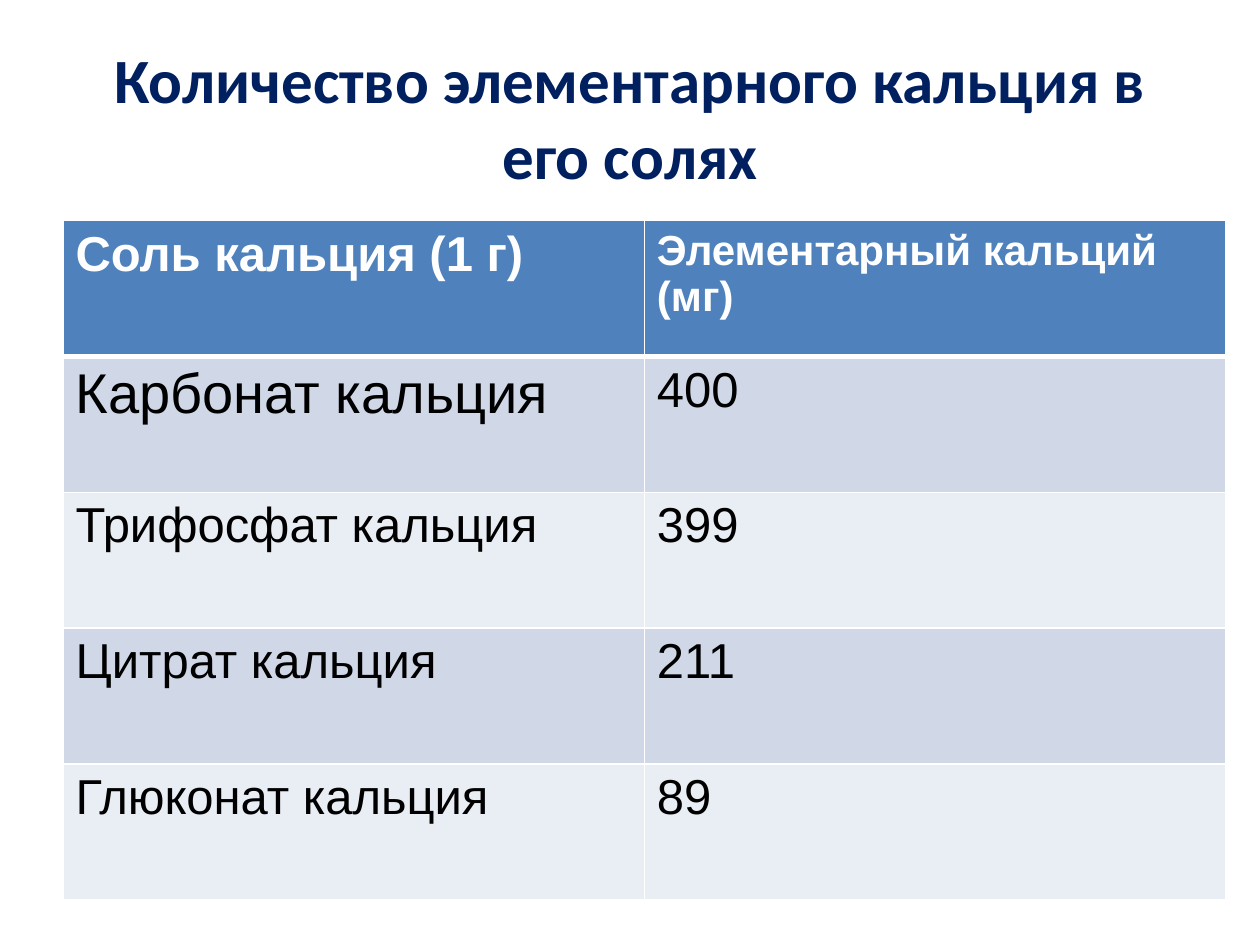
"""Build a slide with a table of elemental calcium in calcium salts."""
from lxml.etree import SubElement
from pptx import Presentation
from pptx.dml.color import RGBColor as Color
from pptx.enum.text import MSO_ANCHOR as Anchor, PP_ALIGN as Align
from pptx.oxml.ns import qn
from pptx.util import Cm, Pt

TITLE = "Количество элементарного кальция в его солях"
ROWS = [
    (("Соль кальция (1 г)", 28), ("Элементарный кальций (мг)", 24)),
    (("Карбонат кальция", 32), ("400", 28)),
    (("Трифосфат кальция", 28), ("399", 28)),
    (("Цитрат кальция", 28), ("211", 28)),
    (("Глюконат кальция", 28), ("89", 28)),
]
COLORS = {
    "title": "002060",
    "header": "4F81BD",
    "odd": "D0D8E8",
    "even": "E9EDF4",
    "white": "FFFFFF",
    "black": "000000",
}
TITLE_BOX = (Cm(1.27), Cm(0.76), Cm(22.86), Cm(3.18))
TABLE_BOX = (Cm(1.27), Cm(4.45), Cm(23.44), Cm(13.69))
THIN, THICK = Pt(1), Pt(3)


def write_text(frame, text, color, **formats):
    """Put one formatted run into a text frame."""
    run = frame.paragraphs[0].add_run()
    run.text = text
    for name, value in formats.items():
        setattr(run.font, name, value)
    run.font.color.rgb = Color.from_string(COLORS[color])


def add_borders(cell, widths):
    """Draw white cell borders with the given widths by side."""
    properties = cell._tc.get_or_add_tcPr()
    for side, width in widths.items():
        line = SubElement(properties, qn(f"a:ln{side}"), w=str(width))
        fill = SubElement(line, qn("a:solidFill"))
        SubElement(fill, qn("a:srgbClr"), val=COLORS["white"])


def add_title(slide):
    """Add the centred heading."""
    frame = slide.shapes.add_textbox(*TITLE_BOX).text_frame
    frame.word_wrap = True
    frame.vertical_anchor = Anchor.MIDDLE
    frame.paragraphs[0].alignment = Align.CENTER
    write_text(frame, TITLE, "title", name="Calibri", size=Pt(36), bold=True)


def add_salt_table(slide):
    """Add the table with its header and banded rows."""
    table = slide.shapes.add_table(len(ROWS), len(ROWS[0]), *TABLE_BOX).table
    for row_index, row in enumerate(ROWS):
        is_header = row_index == 0
        band = "header" if is_header else ("even", "odd")[row_index % 2]
        widths = {
            "L": THIN,
            "R": THIN,
            "T": THICK if row_index == 1 else THIN,
            "B": THICK if is_header else THIN,
        }
        for column_index, (text, size) in enumerate(row):
            cell = table.cell(row_index, column_index)
            add_borders(cell, widths)
            cell.fill.solid()
            cell.fill.fore_color.rgb = Color.from_string(COLORS[band])
            write_text(cell.text_frame, text, "white" if is_header else "black",
                       name="Arial", size=Pt(size), bold=is_header)


def main():
    """Create and save the presentation."""
    presentation = Presentation()
    presentation.slide_width, presentation.slide_height = Cm(25.4), Cm(19.05)
    slide = presentation.slides.add_slide(presentation.slide_layouts[6])
    add_title(slide)
    add_salt_table(slide)
    presentation.save("out.pptx")


if __name__ == "__main__":
    main()
